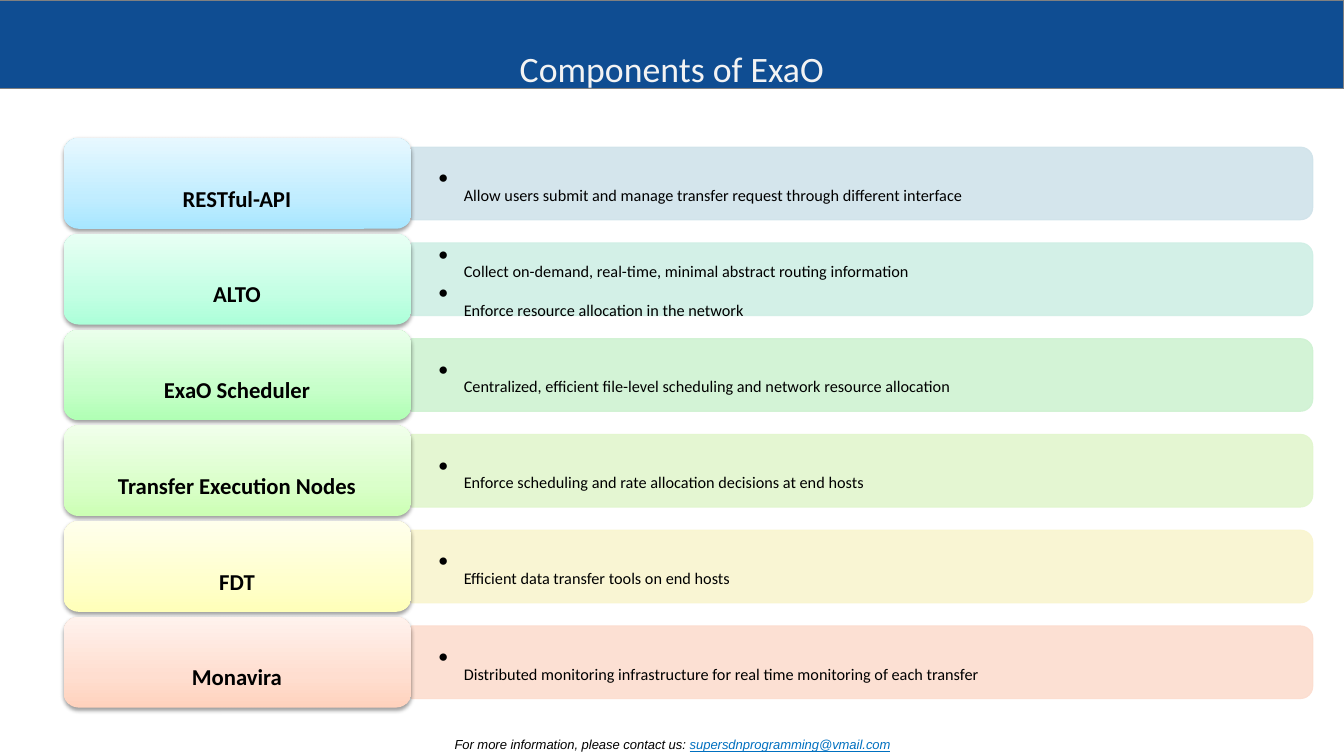
from dataclasses import dataclass, field

import pptx
import pptx.dml.color
import pptx.enum.shapes
import pptx.enum.text
import pptx.oxml
import pptx.oxml.ns
import pptx.shapes.autoshape
import pptx.slide
import pptx.text.text
import pptx.util

Inches = pptx.util.Inches
Pt = pptx.util.Pt
SHAPE = pptx.enum.shapes.MSO_SHAPE
CENTER = pptx.enum.text.PP_ALIGN.CENTER
MIDDLE = pptx.enum.text.MSO_ANCHOR.MIDDLE
GROW = pptx.enum.text.MSO_AUTO_SIZE.SHAPE_TO_FIT_TEXT
NS = pptx.oxml.ns.nsdecls("a")

COLORS = {"head": "0F4D92", "edge": "808080", "title": "F3F3F3", "text": "000000", "mail": "0070C0"}
WIDTH, HEIGHT = 13.33, 7.5
TOP, PITCH = 1.37, 0.95
BAR_LEFT, BAR_WIDE, BAR_HIGH = 4.08, 8.94, 0.72


@dataclass
class Row:
    name: str
    notes: list[str]
    bar: str
    shades: tuple[str, str, str]


@dataclass
class Style:
    font: dict
    color: str = COLORS["text"]
    para: dict = field(default_factory=dict)
    frame: dict = field(default_factory=dict)
    after: int = 0
    bullet: bool = False


ROWS = [
    Row("RESTful-API", ["Allow users submit and manage transfer request through different interface"],
        "D0E3EA", ("A7E6FF", "C1EDFF", "E7F8FF")),
    Row("ALTO", ["Collect on-demand, real-time, minimal abstract routing information",
                 "Enforce resource allocation in the network"],
        "CFEFE5", ("ACFFD9", "C4FFE4", "E8FFF4")),
    Row("ExaO Scheduler", ["Centralized, efficient file-level scheduling and network resource allocation"],
        "CFF2D2", ("B0FFB4", "C7FFCA", "EAFFEB")),
    Row("Transfer Execution Nodes", ["Enforce scheduling and rate allocation decisions at end hosts"],
        "E2F6CE", ("CCFFB4", "DAFFCA", "F1FFEB")),
    Row("FDT", ["Efficient data transfer tools on end hosts"],
        "F9F5CF", ("FFFFB9", "FFFFCD", "FFFFEC")),
    Row("Monavira", ["Distributed monitoring infrastructure for real time monitoring of each transfer"],
        "FCDDCF", ("FFD2BD", "FFDED0", "FFF2ED")),
]


def pads(side: float, end: float) -> dict:
    return {"margin_left": Inches(side), "margin_right": Inches(side),
            "margin_top": Inches(end), "margin_bottom": Inches(end)}


TITLE = Style({"name": "Calibri", "size": Pt(44)}, COLORS["title"],
              {"alignment": CENTER}, {"auto_size": GROW})
LABEL = Style({"name": "Calibri", "size": Pt(28), "bold": True},
              para={"alignment": CENTER, "line_spacing": 0.9},
              frame={"vertical_anchor": MIDDLE, **pads(0.12, 0.06)}, after=35)
NOTE = Style({"name": "Calibri", "size": Pt(20)},
             para={"level": 1, "line_spacing": 0.9},
             frame={"vertical_anchor": MIDDLE, **pads(0.27, 0.14)}, after=15, bullet=True)
FOOT = Style({"name": "Arial", "size": Pt(16), "italic": True},
             para={"alignment": CENTER}, frame={"auto_size": GROW})


def rgb(code: str) -> pptx.dml.color.RGBColor:
    return pptx.dml.color.RGBColor.from_string(code)


def apply(target: object, values: dict) -> None:
    for name, value in values.items():
        setattr(target, name, value)


def xml(text: str) -> pptx.oxml.xmlchemy.BaseOxmlElement:
    """Parse one element, adding the drawing namespace to its root tag."""
    root, rest = text.split(">", 1)
    slash = "/" if root.endswith("/") else ""
    return pptx.oxml.parse_xml(f"{root.rstrip('/')} {NS}{slash}>{rest}")


def add_run(para: pptx.text.text._Paragraph, text: str, style: Style, color: str,
            **extra: bool) -> None:
    run = para.add_run()
    run.text = text
    apply(run.font, {**style.font, **extra})
    run.font.color.rgb = rgb(color)
    run._r.get_or_add_rPr().set("baseline", "-25000")


def add_text(slide: pptx.slide.Slide, box: tuple, lines: list[str],
             style: Style) -> pptx.text.text._Paragraph:
    """Add a text box and return its last paragraph."""
    frame = slide.shapes.add_textbox(*map(Inches, box)).text_frame
    apply(frame, {"word_wrap": True, **style.frame})
    for i, line in enumerate(lines):
        para = frame.add_paragraph() if i else frame.paragraphs[0]
        apply(para, style.para)
        props = para._p.get_or_add_pPr()
        if style.after:
            props.append(xml(f'<a:spcAft><a:spcPct val="{style.after * 1000}"/></a:spcAft>'))
        if style.bullet:
            props.set("marL", str(Inches(0.25)))
            props.set("indent", str(-Inches(0.25)))
            props.append(xml('<a:buChar char="•"/>'))
        add_run(para, line, style, style.color)
    return frame.paragraphs[-1]


def add_box(slide: pptx.slide.Slide, kind: SHAPE, box: tuple, fill: str = "",
            edge: str = "") -> pptx.shapes.autoshape.Shape:
    shape = slide.shapes.add_shape(kind, *map(Inches, box))
    shape.shadow.inherit = False
    if fill:
        shape.fill.solid()
        shape.fill.fore_color.rgb = rgb(fill)
    if edge:
        shape.line.color.rgb = rgb(edge)
        shape.line.width = Pt(0.75)
    else:
        shape.line.fill.background()
    return shape


def add_bar(slide: pptx.slide.Slide, top: float, color: str) -> None:
    """Draw a bar rounded at its right end, by turning an upright one."""
    shift = (BAR_WIDE - BAR_HIGH) / 2
    box = (BAR_LEFT + shift, top - shift, BAR_HIGH, BAR_WIDE)
    bar = add_box(slide, SHAPE.ROUND_2_SAME_RECTANGLE, box, color, color)
    bar.rotation = 90
    for tint in bar._element.spPr.iter(pptx.oxml.ns.qn("a:srgbClr")):
        tint.append(xml('<a:alpha val="90000"/>'))


def add_tab(slide: pptx.slide.Slide, top: float, shades: tuple[str, str, str]) -> None:
    """Draw a rounded tab with a gradient and a soft shadow."""
    tab = add_box(slide, SHAPE.ROUNDED_RECTANGLE, (0.63, top, 3.45, 0.9))
    stops = "".join(f'<a:gs pos="{pos * 1000}"><a:srgbClr val="{shade}"/></a:gs>'
                    for pos, shade in zip((0, 35, 100), shades))
    props = tab._element.spPr
    props.find(pptx.oxml.ns.qn("a:prstGeom")).addnext(xml(
        f'<a:gradFill rotWithShape="1"><a:gsLst>{stops}</a:gsLst>'
        '<a:lin ang="16200000" scaled="0"/></a:gradFill>'))
    glow = xml(f'<a:outerShdw blurRad="{Pt(3.1)}" dist="{Pt(1.6)}" dir="5400000" rotWithShape="0">'
               f'<a:srgbClr val="{COLORS["text"]}"><a:alpha val="38000"/></a:srgbClr></a:outerShdw>')
    props.find(pptx.oxml.ns.qn("a:effectLst")).append(glow)


def main() -> None:
    deck = pptx.Presentation()
    apply(deck, {"slide_width": Inches(WIDTH), "slide_height": Inches(HEIGHT)})
    slide = deck.slides.add_slide(deck.slide_layouts[6])
    add_box(slide, SHAPE.RECTANGLE, (0, 0, WIDTH, 0.88), COLORS["head"], COLORS["edge"])
    add_text(slide, (0, 0.01, WIDTH, 0.84), ["Components of ExaO"], TITLE)
    for i, row in enumerate(ROWS):
        top = TOP + i * PITCH
        add_bar(slide, top + 0.09, row.bar)
        add_text(slide, (BAR_LEFT, top + 0.13, 8.91, 0.65), row.notes, NOTE)
        add_tab(slide, top, row.shades)
        add_text(slide, (0.67, top + 0.04, 3.36, 0.81), [row.name], LABEL)
    foot = add_text(slide, (1.1, 7.11, 11.14, 0.37), ["For more information, please contact us: "], FOOT)
    add_run(foot, "supersdnprogramming@vmail.com", FOOT, COLORS["mail"], underline=True)
    deck.save("out.pptx")


if __name__ == "__main__":
    main()
